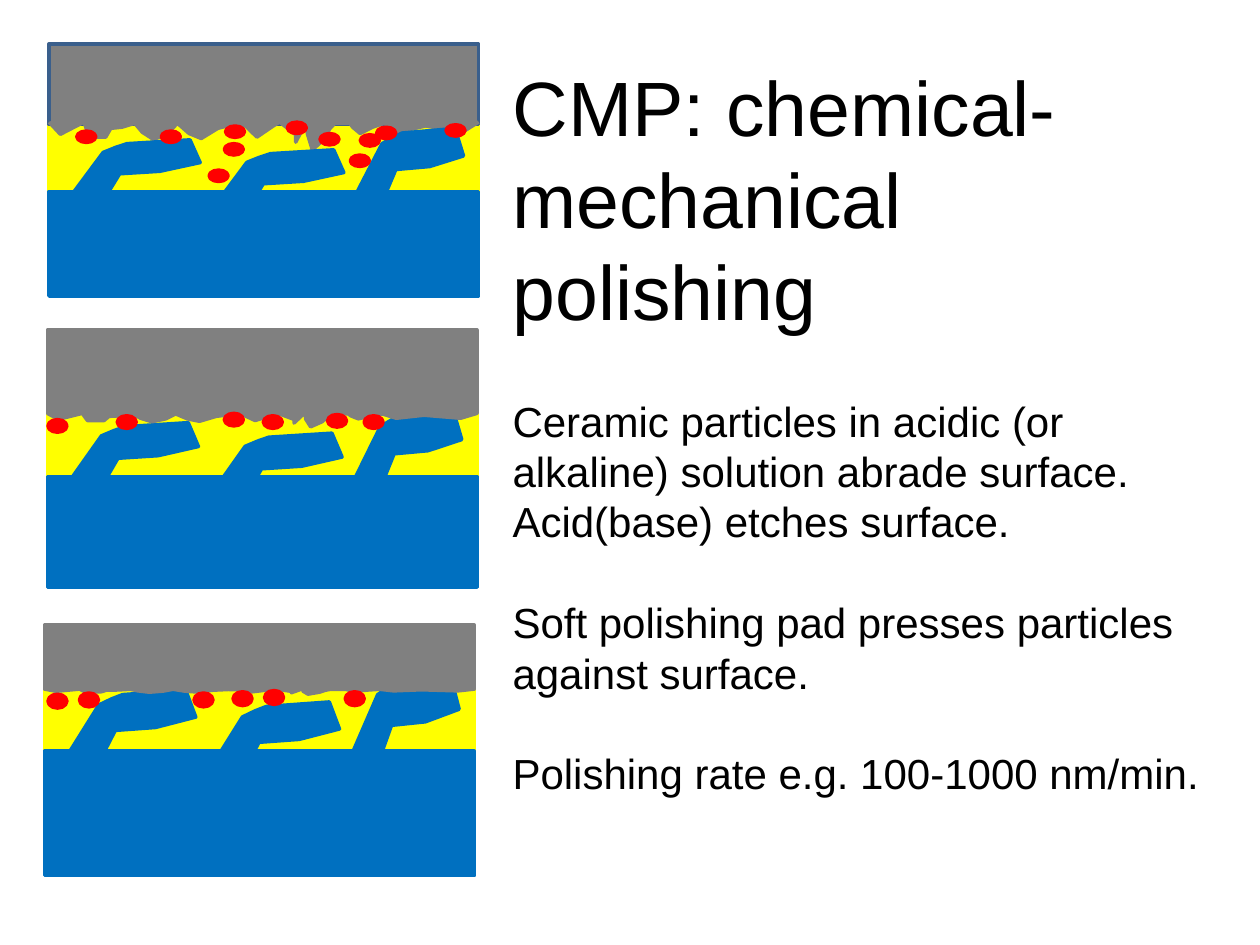
from pptx import Presentation
from pptx.dml.color import RGBColor
from pptx.enum import shapes as kinds, text as modes
from pptx.util import Pt

GREY, BLUE, YELLOW, RED, EDGE = "808080", "0070C0", "FFFF00", "FF0000", "3A5F8C"
WIDE = 245.5
BEAD = 10.8

ROUGH = [
    (0, 0), (6.5, 7), (20, 0), (23, 8.6), (32.4, 8.6), (35.3, 3.6),
    (41.8, 2.9), (49, 0.7), (53.3, 5.8), (59.8, 10), (67.7, 6.5),
    (73.4, 0.7), (80, 6.5), (87, 9.4), (96.5, 3.6), (105, 1.4),
    (112.3, 2.2), (118.8, 8.6), (128.2, 2.2), (131.8, 0), (141, 7.2),
    (141, 11.5), (146.2, 1.4), (147.6, 1.4), (147.6, 6.5), (150.5, 16),
    (157, 10), (160.6, 3.6), (163.4, 0.7), (172, 0.7), (173.5, 2.9),
    (177.8, 6.5), (185, 2.9), (191.5, 0.7), (199.4, 5.8), (215.3, 2.2),
    (236.2, 5.8), (WIDE, 0),
]
TOOTH = [
    (0, 29.5), (16.6, 7.2), (23.8, 4.3), (30.2, 2.2), (66.2, 0),
    (72, 13), (49, 18), (26, 19.4), (19.4, 30.2),
]
TEETH = [(14.4, 6.5, 1, 1), (96.5, 12.2, 1, 1), (176.4, 0, 0.84, 1.21)]

PANELS = [
    {
        "left": 28, "fluid": (51.1, 60.5), "wafer": (25.2, 46),
        "pad": (109.4, 59.8), "edge": EDGE, "rough": (69.8, 1),
        "teeth": (73.4, 1), "bead": 6.5, "order": ("wafer", "pad"),
        "beads": [
            (43.9, 74.9), (119.5, 97.2), (92.2, 74.9), (205.9, 77),
            (128.2, 82.1), (182.9, 76.3), (128.9, 72), (200.2, 88.6),
            (164.2, 69.8), (254.9, 71.3), (215.3, 72.7),
        ],
    },
    {
        "left": 27, "fluid": (234.7, 53.3), "wafer": (188.6, 47.5),
        "pad": (272.2, 63.4), "edge": GREY, "rough": (236.2, 0.48),
        "teeth": (234.7, 1.05), "bead": 7.2, "order": ("pad", "wafer"),
        "beads": [
            (27.4, 239.8), (67, 237.6), (128.2, 236.2), (150.5, 237.6),
            (187.2, 236.9), (208.1, 237.6),
        ],
    },
    {
        "left": 25.5, "fluid": (386.6, 59.8), "wafer": (357.1, 36.7),
        "pad": (429.1, 71.3), "edge": GREY, "rough": (393.8, 0.18),
        "teeth": (386.6, 1.19), "bead": 7.9, "order": ("pad", "wafer"),
        "beads": [
            (27.4, 396.7), (151.2, 394.6), (45.4, 396), (110.9, 396),
            (133.2, 395.3), (197.3, 395.3),
        ],
    },
]

WORDS = [
    ("CMP: chemical-mechanical polishing", 44, 0),
    ("Ceramic particles in acidic (or alkaline) solution abrade surface.", 24, 33.6),
    ("Acid(base) etches surface.", 24, 0),
    ("Soft polishing pad presses particles against surface.", 24, 28.8),
    ("Polishing rate e.g. 100-1000 nm/min.", 24, 28.8),
]


def tint(code):
    return RGBColor.from_string(code)


def paint(shape, fill, edge=None):
    shape.shadow.inherit = False
    shape.fill.solid()
    shape.fill.fore_color.rgb = tint(fill)
    shape.line.color.rgb = tint(edge or fill)
    shape.line.width = Pt(2)


def block(group, kind, box, fill, edge=None):
    paint(group.shapes.add_shape(kind, *map(Pt, box)), fill, edge)


def outline(group, dots, left, top, wide, high, fill):
    spots = [(Pt(left + x * wide), Pt(top + y * high)) for x, y in dots]
    form = group.shapes.build_freeform(*spots[0])
    form.add_line_segments(spots[1:], close=False)
    paint(form.convert_to_shape(), fill)


def layer(group, panel, name, fill, edge=None):
    top, high = panel[name]
    box = (panel["left"], top, WIDE, high)
    block(group, kinds.MSO_SHAPE.RECTANGLE, box, fill, edge)


def wafer(group, panel):
    layer(group, panel, "wafer", GREY, panel["edge"])
    top, depth = panel["rough"]
    outline(group, ROUGH, panel["left"], top, 1, depth, GREY)


def pad(group, panel):
    layer(group, panel, "pad", BLUE)
    top, scale = panel["teeth"]
    for x, y, wide, high in TEETH:
        outline(group, TOOTH, panel["left"] + x, top + y * scale,
                wide, high * scale, BLUE)


def draw(slide, panel):
    group = slide.shapes.add_group_shape()
    layer(group, panel, "fluid", YELLOW)
    parts = {"wafer": wafer, "pad": pad}
    for name in panel["order"]:
        parts[name](group, panel)
    for x, y in panel["beads"]:
        block(group, kinds.MSO_SHAPE.OVAL, (x, y, BEAD, panel["bead"]), RED)


def write(slide):
    box = slide.shapes.add_textbox(*map(Pt, (285.8, 30.2, 416.2, 433.4)))
    frame = box.text_frame
    frame.word_wrap = True
    frame.auto_size = modes.MSO_AUTO_SIZE.SHAPE_TO_FIT_TEXT
    frame.text = "\n".join(words for words, _, _ in WORDS)
    for para, (_, size, gap) in zip(frame.paragraphs, WORDS):
        para.line_spacing = Pt(size * 1.2)
        para.space_before = Pt(gap)
        font = para.runs[0].font
        font.name = "Arial"
        font.size = Pt(size)
        font.color.rgb = tint("000000")


def main():
    deck = Presentation()
    deck.slide_width, deck.slide_height = Pt(720), Pt(540)
    slide = deck.slides.add_slide(deck.slide_layouts[6])
    for panel in PANELS:
        draw(slide, panel)
    write(slide)
    deck.save("out.pptx")


if __name__ == "__main__":
    main()
